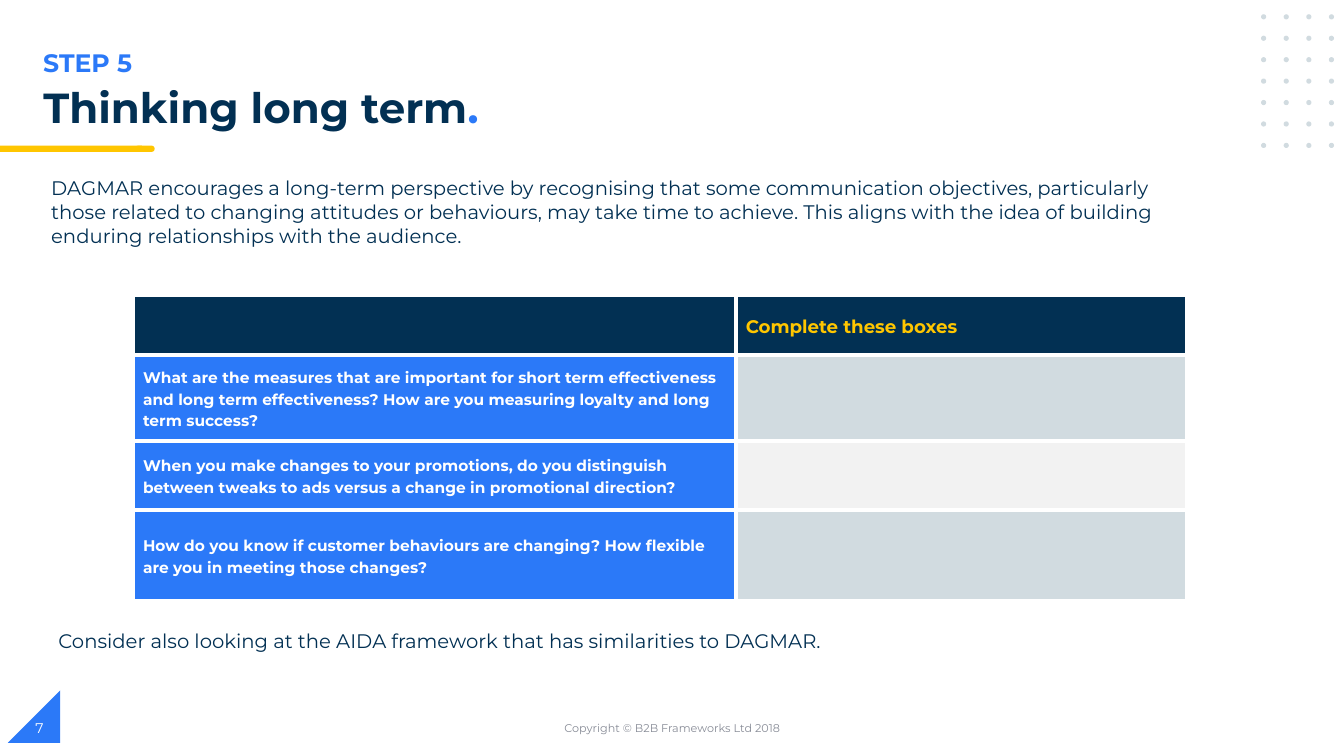
from lxml.etree import SubElement
from pptx import Presentation
from pptx.dml.color import RGBColor
from pptx.enum.shapes import MSO_SHAPE
from pptx.enum.text import MSO_ANCHOR, MSO_AUTO_SIZE, PP_ALIGN
from pptx.oxml.ns import qn
from pptx.util import Cm, Pt

NAVY = RGBColor(0x02, 0x30, 0x53)
BLUE = RGBColor(0x2B, 0x79, 0xF8)
YELLOW = RGBColor(0xFF, 0xC6, 0x00)
MIST = RGBColor(0xD1, 0xDB, 0xE0)
PALE = RGBColor(0xF2, 0xF2, 0xF2)
GREY = RGBColor(0x88, 0x8C, 0x97)
WHITE = RGBColor(0xFF, 0xFF, 0xFF)

TITLE = [("Thinking long term", NAVY), (".", BLUE)]
TITLE_BOX = (0.84, 2.08, 26.29, 1.42)

# text, box in cm, size, colour, bold, alignment, anchor
TEXTS = [
    ("STEP 5", (0.84, 1.07, 17, 1.02), 18, BLUE, True, PP_ALIGN.LEFT, MSO_ANCHOR.TOP),
    ("DAGMAR encourages a long-term perspective by recognising that some "
     "communication objectives, particularly those related to changing attitudes "
     "or behaviours, may take time to achieve. This aligns with the idea of "
     "building enduring relationships with the audience.",
     (1.04, 4.32, 29.39, 2.06), 14, NAVY, False, PP_ALIGN.LEFT, MSO_ANCHOR.TOP),
    ("Consider also looking at the AIDA framework that has similarities to DAGMAR.",
     (1.22, 15.72, 25.2, 0.86), 14, NAVY, False, PP_ALIGN.LEFT, MSO_ANCHOR.TOP),
    ("Copyright © B2B Frameworks Ltd 2018",
     (11.23, 17.83, 11.43, 1.02), 8, GREY, False, PP_ALIGN.CENTER, MSO_ANCHOR.MIDDLE),
    ("7", (0.64, 17.83, 7.62, 1.02), 10, WHITE, False, PP_ALIGN.LEFT, MSO_ANCHOR.MIDDLE),
]

HEADER = "Complete these boxes"
# question, row height in cm, answer fill
QUESTIONS = [
    ("What are the measures that are important for short term effectiveness and "
     "long term effectiveness? How are you measuring loyalty and long term success?",
     2.18, MIST),
    ("When you make changes to your promotions, do you distinguish between tweaks "
     "to ads versus a change in promotional direction?", 1.73, PALE),
    ("How do you know if customer behaviours are changing? How flexible are you in "
     "meeting those changes?", 2.29, MIST),
]
TABLE_LEFT, TABLE_TOP = 3.35, 7.44
COLUMNS = (15.19, 11.38)
HEADER_HEIGHT = 1.5

DOT_LEFT, DOT_TOP, DOT_SIZE = 31.78, 0.36, 0.13
DOT_COLUMNS, DOT_ROWS = 4, 7
DOT_STEP_X, DOT_STEP_Y = 0.57, 0.54


def cm(box):
    return [Cm(v) for v in box]


def add_run(p, text, size, color, bold):
    r = p.add_run()
    r.text = text
    r.font.color.rgb = color
    for name, value in dict(name="Montserrat", size=Pt(size), bold=bold).items():
        setattr(r.font, name, value)


def add_shape(kind, box, color):
    s = slide.shapes.add_shape(kind, *cm(box))
    s.shadow.inherit = False
    s.fill.solid()
    s.fill.fore_color.rgb = color
    s.line.fill.background()
    return s


def add_text(text, box, size, color, bold, align, anchor):
    tf = slide.shapes.add_textbox(*cm(box)).text_frame
    tf.word_wrap = True
    tf.vertical_anchor = anchor
    tf.paragraphs[0].alignment = align
    add_run(tf.paragraphs[0], text, size, color, bold)


def format_cell(cell, fill, text="", size=11, color=WHITE):
    """Set borders, fill and text; borders must precede the fill in the XML."""
    tc_pr = cell._tc.get_or_add_tcPr()
    for side in ("a:lnL", "a:lnR", "a:lnT", "a:lnB"):
        ln = SubElement(tc_pr, qn(side), w=str(Pt(3)))
        SubElement(SubElement(ln, qn("a:solidFill")), qn("a:srgbClr"), val=str(WHITE))
    cell.fill.solid()
    cell.fill.fore_color.rgb = fill
    cell.vertical_anchor = MSO_ANCHOR.MIDDLE
    cell.margin_top = cell.margin_bottom = 0
    if text:
        p = cell.text_frame.paragraphs[0]
        p.line_spacing = 1.15
        add_run(p, text, size, color, True)


prs = Presentation()
prs.slide_width, prs.slide_height = Cm(33.87), Cm(19.05)
slide = prs.slides.add_slide(prs.slide_layouts[5])

# Decoration
corner = add_shape(MSO_SHAPE.RIGHT_TRIANGLE, (0.2, 17.4, 1.32, 1.32), BLUE)
corner.element.spPr.get_or_add_xfrm().set("flipH", "1")
add_shape(MSO_SHAPE.FLOWCHART_TERMINATOR, (3.4, 3.67, 0.5, 0.16), YELLOW)
add_shape(MSO_SHAPE.RECTANGLE, (0, 3.67, 3.58, 0.16), YELLOW)
for row in range(DOT_ROWS):
    for col in range(DOT_COLUMNS):
        add_shape(MSO_SHAPE.OVAL, (DOT_LEFT + col * DOT_STEP_X, DOT_TOP + row * DOT_STEP_Y,
                                   DOT_SIZE, DOT_SIZE), MIST)

# Title and texts
title = slide.shapes.title
title.left, title.top, title.width, title.height = cm(TITLE_BOX)
tf = title.text_frame
for name, value in dict(word_wrap=True, auto_size=MSO_AUTO_SIZE.NONE,
                        vertical_anchor=MSO_ANCHOR.TOP).items():
    setattr(tf, name, value)
p = tf.paragraphs[0]
p.alignment, p.line_spacing = PP_ALIGN.LEFT, 0.9
for text, color in TITLE:
    add_run(p, text, 30, color, True)
for item in TEXTS:
    add_text(*item)

# Question table
heights = [HEADER_HEIGHT] + [height for _, height, _ in QUESTIONS]
table = slide.shapes.add_table(len(heights), len(COLUMNS), *cm(
    (TABLE_LEFT, TABLE_TOP, sum(COLUMNS), sum(heights)))).table
for column, width in zip(table.columns, COLUMNS):
    column.width = Cm(width)
for row, height in zip(table.rows, heights):
    row.height = Cm(height)
format_cell(table.cell(0, 0), NAVY)
format_cell(table.cell(0, 1), NAVY, HEADER, 13, YELLOW)
for i, (question, _, answer_fill) in enumerate(QUESTIONS, 1):
    format_cell(table.cell(i, 0), BLUE, question)
    format_cell(table.cell(i, 1), answer_fill)

prs.save("out.pptx")
